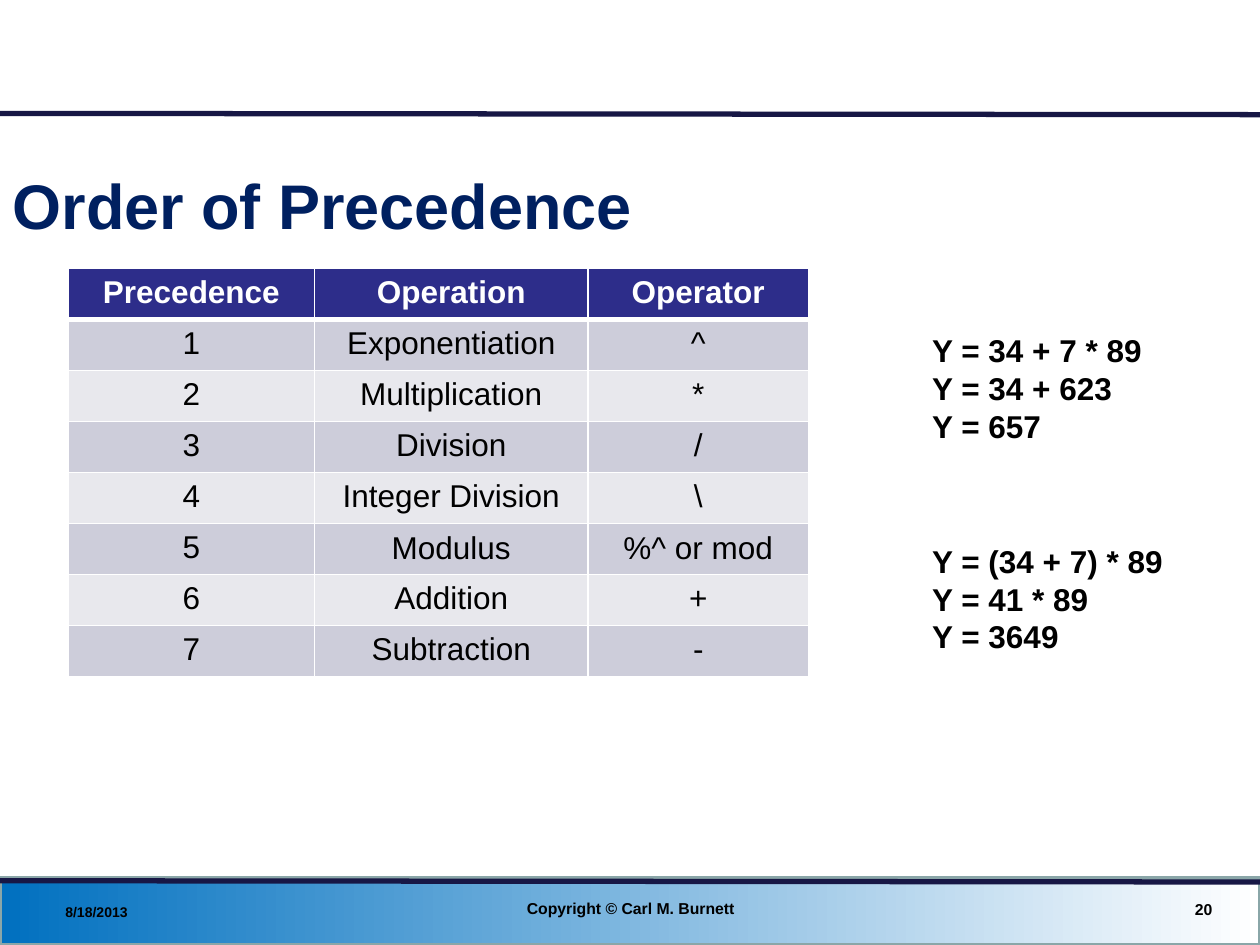
import pptx
import pptx.dml.color
import pptx.enum.shapes
import pptx.enum.text
import pptx.util
from lxml import etree

Pt = pptx.util.Pt
ALIGN = pptx.enum.text.PP_ALIGN
ANCHOR = pptx.enum.text.MSO_ANCHOR
AUTO_SIZE = pptx.enum.text.MSO_AUTO_SIZE

COLORS = {
    "title": "002060", "text": "000000", "white": "FFFFFF", "rule": "171745",
    "band_start": "0070C0", "band_line": "8AA6A8",
    "header": "2D2D8A", "odd_row": "CDCDDA", "even_row": "E8E8ED",
}
TITLE = "Order of Precedence"
ROWS = [
    ("Precedence", "Operation", "Operator"),
    ("1", "Exponentiation", "^"),
    ("2", "Multiplication", "*"),
    ("3", "Division", "/"),
    ("4", "Integer Division", "\\"),
    ("5", "Modulus", "%^ or mod"),
    ("6", "Addition", "+"),
    ("7", "Subtraction", "-"),
]
MIDDLE_CELLS = {"Modulus", "%^ or mod"}
COLUMN_WIDTHS = (140.75, 156.25, 126)
ROW_HEIGHT = 29.16
TABLE_LEFT, TABLE_TOP = 39, 153.36
RULES = [(503.28, 504), (64.8, 65.52)]
FOOTERS = [
    ("8/18/2013", (30.24, 511.2, 167.76, 19.44), 8, ALIGN.LEFT),
    ("20", (532.08, 509.04, 167.76, 20.88), 9, ALIGN.RIGHT),
    ("Copyright © Carl M. Burnett", (246.24, 508.32, 228.24, 20.88), 9, ALIGN.CENTER),
]
EXAMPLES = [
    (("Y = 34 + 7 * 89", "Y = 34 + 623", "Y = 657"), (525.6, 185.76, 135.36, 72.72)),
    (("Y = (34 + 7) * 89", "Y = 41 * 89", "Y = 3649"), (525.6, 306, 147.6, 72.72)),
]


def color(name):
    return pptx.dml.color.RGBColor.from_string(COLORS[name])


def apply(target, values):
    for name, value in values.items():
        setattr(target, name, value)


def write(frame, lines, size, color_name="text", bold=True, alignment=ALIGN.LEFT):
    frame.text = "\n".join(lines)
    for paragraph in frame.paragraphs:
        paragraph.alignment = alignment
        apply(paragraph.font, {"name": "Arial", "size": Pt(size), "bold": bold})
        paragraph.font.color.rgb = color(color_name)


def add_text(slide, lines, box, size, alignment=ALIGN.LEFT, **frame_format):
    frame = slide.shapes.add_textbox(*map(Pt, box)).text_frame
    apply(frame, frame_format)
    write(frame, lines, size, alignment=alignment)


def add_band(slide):
    band = slide.shapes.add_shape(
        pptx.enum.shapes.MSO_SHAPE.RECTANGLE, Pt(0), Pt(501.84), Pt(720), Pt(38.16))
    band.shadow.inherit = False
    band.fill.gradient()
    band.fill.gradient_angle = 0
    for stop, name in zip(band.fill.gradient_stops, ("band_start", "white")):
        stop.color.rgb = color(name)
    band.line.color.rgb = color("band_line")
    band.line.width = Pt(2)


def add_rule(slide, start, end):
    rule = slide.shapes.add_connector(
        pptx.enum.shapes.MSO_CONNECTOR.STRAIGHT, Pt(0), Pt(start), Pt(720), Pt(end))
    rule.line.color.rgb = color("rule")
    rule.line.width = Pt(3)
    properties = rule.element.spPr
    etree.SubElement(properties, pptx.oxml.ns.qn("a:effectLst"))


def set_borders(cell, widths):
    properties = cell._tc.get_or_add_tcPr()
    for index, (side, width) in enumerate(widths.items()):
        line = etree.Element(pptx.oxml.ns.qn("a:ln" + side), w=str(Pt(width)))
        fill = etree.SubElement(line, pptx.oxml.ns.qn("a:solidFill"))
        etree.SubElement(fill, pptx.oxml.ns.qn("a:srgbClr"), val=COLORS["white"])
        properties.insert(index, line)


def add_precedence_table(slide):
    table = slide.shapes.add_table(
        len(ROWS), len(COLUMN_WIDTHS), Pt(TABLE_LEFT), Pt(TABLE_TOP),
        Pt(sum(COLUMN_WIDTHS)), Pt(ROW_HEIGHT * len(ROWS))).table
    for column, width in zip(table.columns, COLUMN_WIDTHS):
        column.width = Pt(width)
    for row_index, values in enumerate(ROWS):
        table.rows[row_index].height = Pt(ROW_HEIGHT)
        header = row_index == 0
        fill_name = "header" if header else ("even_row", "odd_row")[row_index % 2]
        widths = {"L": 1, "R": 1, "T": 3 if row_index == 1 else 1, "B": 3 if header else 1}
        for column_index, value in enumerate(values):
            cell = table.cell(row_index, column_index)
            write(cell.text_frame, [value], 18, "white" if header else "text",
                  header, ALIGN.CENTER)
            cell.vertical_anchor = ANCHOR.MIDDLE if value in MIDDLE_CELLS else ANCHOR.TOP
            cell.fill.solid()
            cell.fill.fore_color.rgb = color(fill_name)
            set_borders(cell, widths)


def main():
    """Build the operator precedence slide."""
    presentation = pptx.Presentation()
    apply(presentation, {"slide_width": Pt(720), "slide_height": Pt(540)})
    slide = presentation.slides.add_slide(presentation.slide_layouts[5])
    add_band(slide)
    for start, end in RULES:
        add_rule(slide, start, end)
    title = slide.shapes.title
    apply(title, {"left": Pt(0), "top": Pt(82.08), "width": Pt(689.76), "height": Pt(69.84)})
    apply(title.text_frame, {"vertical_anchor": ANCHOR.MIDDLE, "word_wrap": True,
                             "auto_size": AUTO_SIZE.NONE})
    write(title.text_frame, [TITLE], 36, "title")
    for text, box, size, alignment in FOOTERS:
        add_text(slide, [text], box, size, alignment,
                 word_wrap=True, vertical_anchor=ANCHOR.MIDDLE)
    add_precedence_table(slide)
    for lines, box in EXAMPLES:
        add_text(slide, lines, box, 18, word_wrap=False,
                 auto_size=AUTO_SIZE.SHAPE_TO_FIT_TEXT)
    presentation.save("out.pptx")


if __name__ == "__main__":
    main()
